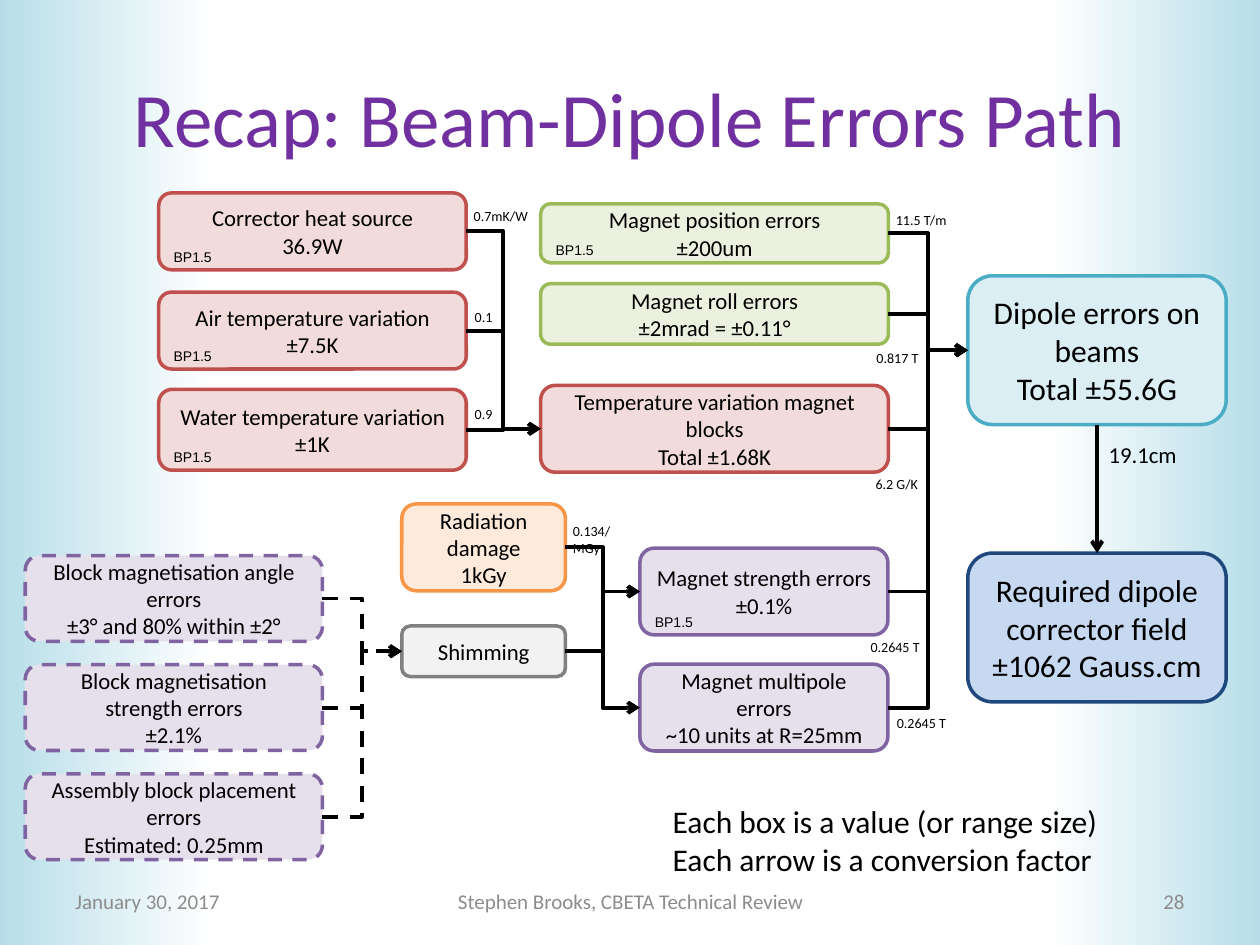
from lxml.etree import SubElement
from pptx import Presentation
from pptx.dml.color import RGBColor
from pptx.enum.dml import MSO_LINE
from pptx.enum.shapes import MSO_CONNECTOR, MSO_SHAPE
from pptx.enum.text import MSO_ANCHOR, PP_ALIGN
from pptx.oxml.ns import qn
from pptx.util import Cm, Pt

BLACK = RGBColor(0x00, 0x00, 0x00)
WHITE = RGBColor(0xFF, 0xFF, 0xFF)
TITLE_PURPLE = RGBColor(0x70, 0x30, 0xA0)
FOOTER_GREY = RGBColor(0x8C, 0x8C, 0x8C)
EDGE_BLUE = RGBColor(0xB7, 0xDE, 0xE8)

# Box styles: fill and outline
RED = RGBColor(0xF2, 0xDC, 0xDB), RGBColor(0xC0, 0x50, 0x4D)
GREEN = RGBColor(0xEB, 0xF1, 0xDE), RGBColor(0x9B, 0xBB, 0x59)
PURPLE = RGBColor(0xE6, 0xE0, 0xEC), RGBColor(0x80, 0x64, 0xA2)
ORANGE = RGBColor(0xFD, 0xEA, 0xDA), RGBColor(0xF7, 0x96, 0x46)
GREY = RGBColor(0xF2, 0xF2, 0xF2), RGBColor(0x80, 0x80, 0x80)
AQUA = RGBColor(0xDB, 0xEE, 0xF4), RGBColor(0x4B, 0xAC, 0xC6)
BLUE = RGBColor(0xC6, 0xD9, 0xF1), RGBColor(0x1F, 0x49, 0x7D)

# Connection sites of a rounded rectangle
TOP, LEFT, BOTTOM, RIGHT = range(4)


class ErrorPathSlide:
    font = "Calibri"
    outline_width = Pt(2)
    arrow_width = Pt(2.25)

    def __init__(self, slide):
        self.slide = slide

    def add_lines(self, frame, lines, size, color=BLACK, align=PP_ALIGN.LEFT, font=None):
        for index, line in enumerate(lines):
            paragraph = frame.paragraphs[0] if index == 0 else frame.add_paragraph()
            paragraph.alignment = align
            run = paragraph.add_run()
            run.text = line
            run.font.name = font or self.font
            run.font.size = Pt(size)
            run.font.color.rgb = color

    def edge_fade(self, left, rotation):
        shape = self.slide.shapes.add_shape(
            MSO_SHAPE.RECTANGLE, Cm(left), Cm(0), Cm(4.29), Cm(19.05))
        shape.rotation = rotation
        shape.shadow.inherit = False
        shape.line.fill.background()
        shape.fill.gradient()
        shape.fill.gradient_angle = 0
        for stop, color in zip(shape.fill.gradient_stops, (EDGE_BLUE, WHITE)):
            stop.color.rgb = color

    def text(self, left, top, width, height, lines, size, color=BLACK,
             align=PP_ALIGN.LEFT, anchor=MSO_ANCHOR.TOP, wrap=True):
        shape = self.slide.shapes.add_textbox(Cm(left), Cm(top), Cm(width), Cm(height))
        frame = shape.text_frame
        frame.word_wrap = wrap
        frame.vertical_anchor = anchor
        self.add_lines(frame, lines, size, color, align)

    def box(self, left, top, width, height, lines, style, size=13, dashed=False):
        shape = self.slide.shapes.add_shape(
            MSO_SHAPE.ROUNDED_RECTANGLE, Cm(left), Cm(top), Cm(width), Cm(height))
        fill, outline = style
        shape.shadow.inherit = False
        shape.fill.solid()
        shape.fill.fore_color.rgb = fill
        shape.line.color.rgb = outline
        shape.line.width = self.outline_width
        if dashed:
            shape.line.dash_style = MSO_LINE.DASH
        frame = shape.text_frame
        frame.word_wrap = True
        frame.vertical_anchor = MSO_ANCHOR.MIDDLE
        self.add_lines(frame, lines, size, align=PP_ALIGN.CENTER)
        return shape

    def badge(self, box):
        """Mark a box with its source in the lower left corner."""
        width, height = Cm(0.99), Cm(0.53)
        shape = self.slide.shapes.add_textbox(
            box.left + Cm(0.2), box.top + box.height - height, width, height)
        frame = shape.text_frame
        frame.word_wrap = False
        frame.margin_left = frame.margin_right = Cm(0.1)
        frame.margin_top = frame.margin_bottom = Cm(0.1)
        self.add_lines(frame, ["BP1.5"], 8, font="Arial")

    def arrow(self, source, target, kind=MSO_CONNECTOR.ELBOW,
              sites=(RIGHT, LEFT), dashed=False):
        connector = self.slide.shapes.add_connector(
            kind, source.left, source.top, target.left, target.top)
        connector.begin_connect(source, sites[0])
        connector.end_connect(target, sites[1])
        connector.line.color.rgb = BLACK
        connector.line.width = self.arrow_width
        if dashed:
            connector.line.dash_style = MSO_LINE.DASH
        properties = connector._element.spPr
        SubElement(properties.find(qn("a:ln")), qn("a:tailEnd"), type="arrow")
        SubElement(properties, qn("a:effectLst"))


def main():
    presentation = Presentation()
    presentation.slide_width = Cm(25.4)
    presentation.slide_height = Cm(19.05)
    page = ErrorPathSlide(presentation.slides.add_slide(presentation.slide_layouts[6]))

    # Background, title and footer
    page.edge_fade(21.11, 180)
    page.edge_fade(0, 0)
    page.text(1.27, 0.76, 22.86, 3.18, ["Recap: Beam-Dipole Errors Path"], 44,
              TITLE_PURPLE, PP_ALIGN.CENTER, MSO_ANCHOR.MIDDLE)
    for left, width, words, align in (
            (1.27, 5.92, "January 30, 2017", PP_ALIGN.LEFT),
            (8.69, 8.05, "Stephen Brooks, CBETA Technical Review", PP_ALIGN.CENTER),
            (18.21, 5.92, "28", PP_ALIGN.RIGHT)):
        page.text(left, 17.65, width, 1.02, [words], 12, FOOTER_GREY, align,
                  MSO_ANCHOR.MIDDLE)

    # Temperature sources
    heat, air, water = temperature_sources = [
        page.box(3.2, top, 6.2, height, lines, RED) for top, height, lines in (
            (3.89, 1.55, ["Corrector heat source", "36.9W"]),
            (5.89, 1.55, ["Air temperature variation", "±7.5K"]),
            (7.85, 1.63, ["Water temperature variation", "±1K"]))]

    # Magnet errors
    position, roll, temperature, strength, multipole = magnet_errors = [
        page.box(left, top, width, height, lines, style)
        for left, top, width, height, lines, style in (
            (10.9, 4.11, 7.01, 1.19, ["Magnet position errors", "±200um"], GREEN),
            (10.9, 5.72, 7.01, 1.22, ["Magnet roll errors", "±2mrad = ±0.11°"], GREEN),
            (10.9, 7.77, 7.01, 1.75,
             ["Temperature variation magnet blocks", "Total ±1.68K"], RED),
            (12.9, 11.05, 5, 1.75, ["Magnet strength errors", "±0.1%"], PURPLE),
            (12.9, 13.39, 5, 1.75,
             ["Magnet multipole errors", "~10 units at R=25mm"], PURPLE))]

    # Block errors, shimming and radiation
    block_errors = [
        page.box(0.51, 11.2 + 2.2 * row, 5.99, 1.73, lines, PURPLE, dashed=True)
        for row, lines in enumerate((
            ["Block magnetisation angle errors", "±3° and 80% within ±2°"],
            ["Block magnetisation strength errors", "±2.1%"],
            ["Assembly block placement errors", "Estimated: 0.25mm"]))]
    radiation = page.box(8.1, 10.16, 3.3, 1.75, ["Radiation damage", "1kGy"], ORANGE)
    shimming = page.box(8.1, 12.62, 3.3, 1.02, ["Shimming"], GREY)

    # Results
    dipole = page.box(19.51, 5.56, 5.21, 3,
                      ["Dipole errors on beams", "Total ±55.6G"], AQUA, 18)
    corrector = page.box(19.51, 11.15, 5.21, 3,
                         ["Required dipole corrector field", "±1062 Gauss.cm"], BLUE, 18)

    # Arrows
    for source in temperature_sources:
        page.arrow(source, temperature)
    for source in magnet_errors:
        page.arrow(source, dipole)
    for source in block_errors:
        page.arrow(source, shimming, dashed=True)
    for source, target in ((shimming, strength), (shimming, multipole),
                           (radiation, strength)):
        page.arrow(source, target)
    page.arrow(dipole, corrector, MSO_CONNECTOR.STRAIGHT, (BOTTOM, TOP))

    # Conversion factors
    for left, top, width, factor, wrap in (
            (9.3, 4.06, 1.8, "0.7mK/W", True),
            (9.32, 6.1, 1.07, "0.1", True),
            (9.32, 8.05, 1.07, "0.9", True),
            (11.3, 10.41, 1.8, "0.134/MGy", True),
            (17.81, 4.14, 1.55, "11.5 T/m", False),
            (17.42, 6.93, 1.35, "0.817 T", False),
            (17.4, 9.47, 1.5, "6.2 G/K", True),
            (17.3, 12.75, 1.6, "0.2645 T", True),
            (17.83, 14.27, 1.6, "0.2645 T", True)):
        page.text(left, top, width, 0.6, [factor], 8, wrap=wrap)
    page.text(22.1, 8.76, 1.91, 0.81, ["19.1cm"], 13, wrap=False)

    # Source marks and legend
    for box in (heat, air, water, position, strength):
        page.badge(box)
    page.text(13.31, 16.05, 9.17, 1.8,
              ["Each box is a value (or range size)", "Each arrow is a conversion factor"],
              18, wrap=False)

    presentation.save("out.pptx")


if __name__ == "__main__":
    main()
